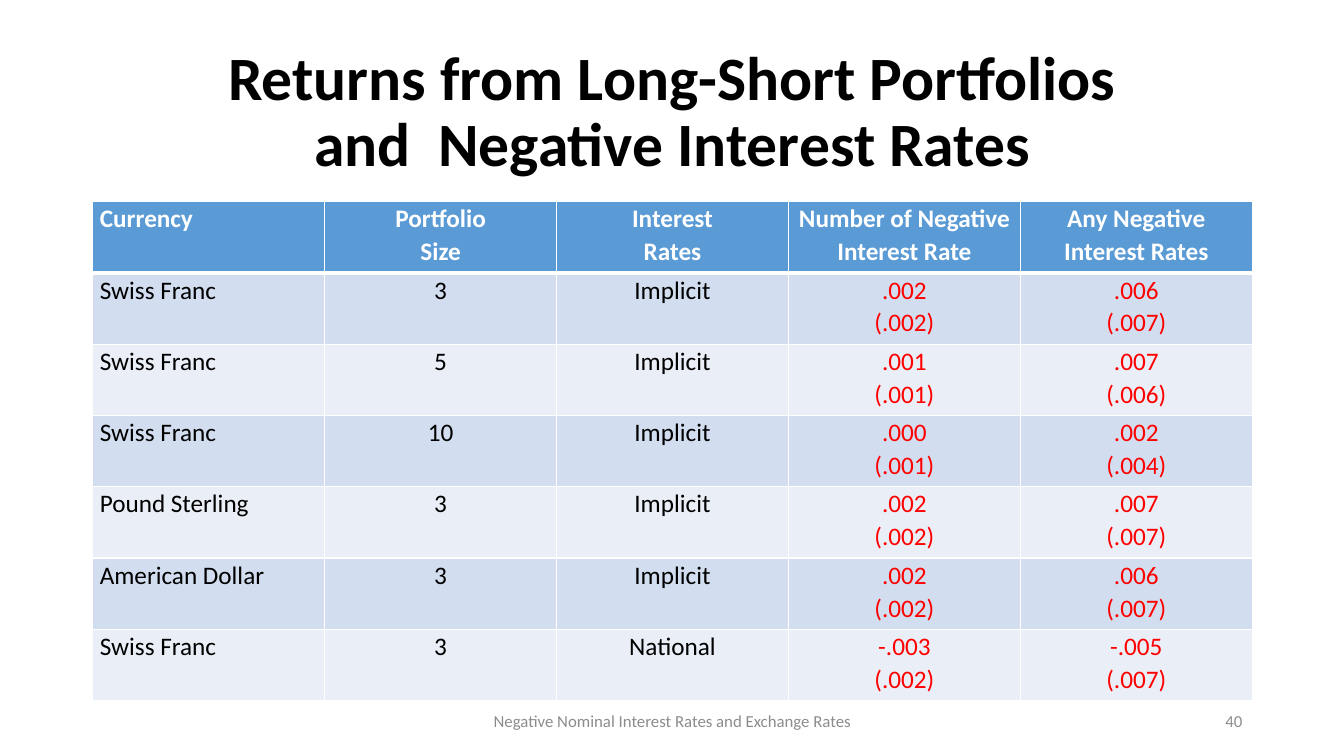
from dataclasses import dataclass

from lxml.etree import SubElement
from pptx import Presentation
from pptx.dml.color import RGBColor
from pptx.enum.text import MSO_ANCHOR, PP_ALIGN
from pptx.oxml.ns import qn
from pptx.slide import Slide
from pptx.table import _Cell
from pptx.text.text import TextFrame
from pptx.util import Inches, Pt

COLORS = {
    "black": "000000",
    "white": "FFFFFF",
    "red": "FF0000",
    "gray": "8C8C8C",
    "header": "5B9BD5",
    "odd": "D2DEEF",
    "even": "EAEFF7",
}
FONT = "Calibri"
HEADINGS = ("Currency", "Portfolio\nSize", "Interest\nRates",
            "Number of Negative\nInterest Rate", "Any Negative\nInterest Rates")


@dataclass
class Style:
    """Look of a piece of text."""
    size: float
    color: str
    bold: bool = False
    align: PP_ALIGN = PP_ALIGN.CENTER
    spacing: float = 1.0


@dataclass
class Result:
    """One table row: each estimate has its standard error below it."""
    currency: str
    size: str
    rates: str
    number: str
    any_negative: str


@dataclass
class FooterText:
    """A text box at the foot of the slide."""
    text: str
    left: float
    width: float
    align: PP_ALIGN


RESULTS = [
    Result("Swiss Franc", "3", "Implicit", ".002\n(.002)", ".006\n(.007)"),
    Result("Swiss Franc", "5", "Implicit", ".001\n(.001)", ".007\n(.006)"),
    Result("Swiss Franc", "10", "Implicit", ".000\n(.001)", ".002\n(.004)"),
    Result("Pound Sterling", "3", "Implicit", ".002\n(.002)", ".007\n(.007)"),
    Result("American Dollar", "3", "Implicit", ".002\n(.002)", ".006\n(.007)"),
    Result("Swiss Franc", "3", "National", "-.003\n(.002)", "-.005\n(.007)"),
]
FOOTERS = [
    FooterText("Negative Nominal Interest Rates and Exchange Rates", 4.42, 4.5, PP_ALIGN.CENTER),
    FooterText("40", 9.42, 3, PP_ALIGN.RIGHT),
]


def rgb(name: str) -> RGBColor:
    """Look up a named colour."""
    return RGBColor.from_string(COLORS[name])


def write(tf: TextFrame, text: str, style: Style) -> None:
    """Fill a text frame and format its paragraphs and runs."""
    tf.text = text
    for p in tf.paragraphs:
        p.alignment = style.align
        p.line_spacing = style.spacing
        for r in p.runs:
            r.font.name = FONT
            r.font.size = Pt(style.size)
            r.font.bold = style.bold
            r.font.color.rgb = rgb(style.color)


def set_borders(cell: _Cell, top: float, bottom: float) -> None:
    """Draw white borders with the given top and bottom widths in points."""
    tc_pr = cell._tc.get_or_add_tcPr()
    for side, width in (("L", 1), ("R", 1), ("T", top), ("B", bottom)):
        ln = SubElement(tc_pr, qn(f"a:ln{side}"), w=str(Pt(width)))
        fill = SubElement(ln, qn("a:solidFill"))
        SubElement(fill, qn("a:srgbClr"), val=COLORS["white"])


def fill_cell(cell: _Cell, text: str, row: int, col: int) -> None:
    """Write and style one table cell according to its row and column."""
    header = row == 0
    color = "white" if header else "red" if col > 2 else "black"
    align = PP_ALIGN.CENTER if col else PP_ALIGN.LEFT
    cell.margin_left = cell.margin_right = Inches(0.07)
    cell.margin_top = cell.margin_bottom = 0
    write(cell.text_frame, text, Style(18, color, header, align, 1.07))
    set_borders(cell, 3 if row == 1 else 1, 3 if header else 1)
    cell.fill.solid()
    cell.fill.fore_color.rgb = rgb("header" if header else "odd" if row % 2 else "even")


def add_title(s: Slide) -> None:
    """Place the slide title."""
    sp = s.shapes.title
    sp.left, sp.top, sp.width, sp.height = Inches(0.92), Inches(0.4), Inches(11.5), Inches(1.45)
    tf = sp.text_frame
    tf.vertical_anchor = MSO_ANCHOR.MIDDLE
    write(tf, "Returns from Long-Short Portfolios\vand  Negative Interest Rates",
          Style(44, "black", True, spacing=0.9))


def add_results(s: Slide) -> None:
    """Add the table of portfolio returns."""
    rows = [HEADINGS] + [(x.currency, x.size, x.rates, x.number, x.any_negative) for x in RESULTS]
    table = s.shapes.add_table(len(rows), len(HEADINGS), Inches(0.92), Inches(2),
                               Inches(11.5), Inches(4.95)).table
    for i, row in enumerate(rows):
        for j, text in enumerate(row):
            fill_cell(table.cell(i, j), text, i, j)


def add_footer(s: Slide, footer: FooterText) -> None:
    """Add one text box at the foot of the slide."""
    sp = s.shapes.add_textbox(Inches(footer.left), Inches(6.95), Inches(footer.width), Inches(0.4))
    tf = sp.text_frame
    tf.word_wrap = True
    tf.vertical_anchor = MSO_ANCHOR.MIDDLE
    write(tf, footer.text, Style(12, "gray", align=footer.align))


def main() -> None:
    """Build and save the slide."""
    prs = Presentation()
    prs.slide_width, prs.slide_height = Inches(13.33), Inches(7.5)
    s = prs.slides.add_slide(prs.slide_layouts[5])
    add_title(s)
    add_results(s)
    for footer in FOOTERS:
        add_footer(s, footer)
    prs.save("out.pptx")


if __name__ == "__main__":
    main()
